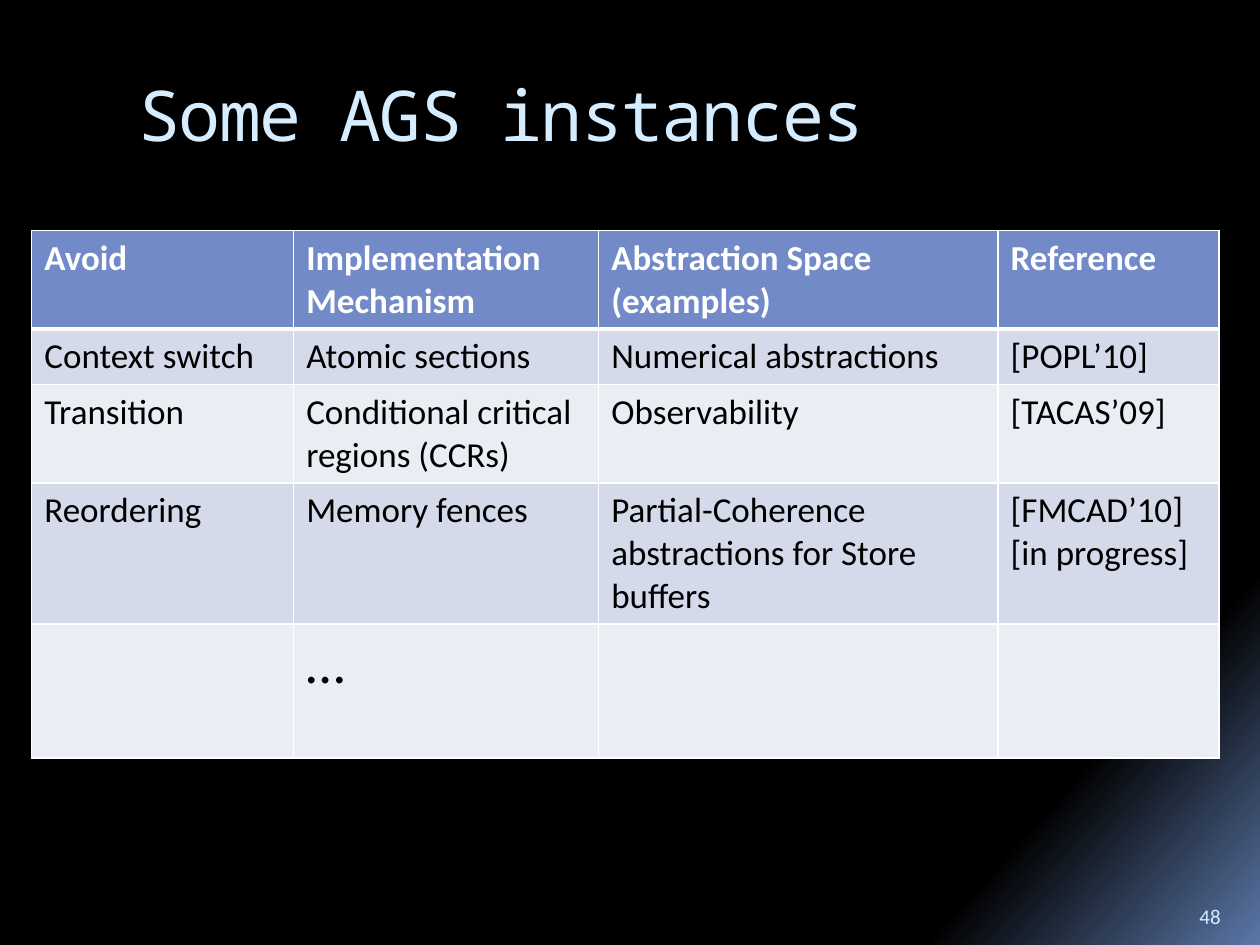
import dataclasses

import lxml.etree
import pptx
import pptx.dml.color
import pptx.enum.text
import pptx.oxml
import pptx.oxml.ns
import pptx.util

Cm = pptx.util.Cm
Pt = pptx.util.Pt
qn = pptx.oxml.ns.qn


@dataclasses.dataclass(frozen=True)
class Theme:
    body_font: str = "Calibri"
    title_font: str = "Noto Sans Mono"
    title_size: int = 40
    body_size: int = 20
    ellipsis_size: int = 32
    number_size: int = 12
    pale: str = "D6ECFF"
    white: str = "FFFFFF"
    black: str = "000000"
    header: str = "738AC8"
    bands: tuple = ("D5DAEB", "EBEDF5")
    glow: tuple = ((65, "000000"), (84, "000000"), (100, "5B77A8"))
    glow_angle: int = 42


class Page:
    """Hold the theme and the current slide, and add styled elements to it."""

    def __init__(self, deck, theme):
        self.theme = theme
        self.slide = deck.slides.add_slide(deck.slide_layouts[5])

    def background(self):
        fill = self.slide.background.fill
        fill.gradient()
        gradient = fill._fill._gradFill
        stops = gradient.find(qn("a:gsLst"))
        for stop in list(stops):
            stops.remove(stop)
        for position, color in self.theme.glow:
            stop = lxml.etree.SubElement(stops, qn("a:gs"), pos=str(position * 1000))
            lxml.etree.SubElement(stop, qn("a:srgbClr"), val=color)
        direction = gradient.find(qn("a:lin"))
        direction.set("ang", str(self.theme.glow_angle * 60000))
        direction.set("scaled", "0")

    def span(self, para, text, size, color, font=None, bold=False):
        span = para.add_run()
        span.text = text
        span.font.name = font or self.theme.body_font
        span.font.size = Pt(size)
        span.font.bold = bold
        span.font.color.rgb = pptx.dml.color.RGBColor.from_string(color)
        return span

    def title(self, text, left, top, width, height):
        box = self.slide.shapes.title
        box.left, box.top, box.width, box.height = map(Cm, (left, top, width, height))
        frame = box.text_frame
        frame.auto_size = pptx.enum.text.MSO_AUTO_SIZE.NONE
        frame.vertical_anchor = pptx.enum.text.MSO_ANCHOR.TOP
        frame.margin_top = Cm(0.03)
        para = frame.paragraphs[0]
        para.alignment = pptx.enum.text.PP_ALIGN.LEFT
        theme = self.theme
        span = self.span(para, text, theme.title_size, theme.pale, theme.title_font)
        span.font._element.set("spc", "-100")

    def number(self, text, left, top, width, height):
        box = self.slide.shapes.add_textbox(*map(Cm, (left, top, width, height)))
        frame = box.text_frame
        frame.word_wrap = True
        frame.vertical_anchor = pptx.enum.text.MSO_ANCHOR.BOTTOM
        self.span(frame.paragraphs[0], text, self.theme.number_size, self.theme.pale)

    def borders(self, cell, bottom):
        properties = cell._tc.get_or_add_tcPr()
        widths = {"a:lnL": 1, "a:lnR": 1, "a:lnT": 1, "a:lnB": bottom}
        for index, (tag, width) in enumerate(widths.items()):
            line = pptx.oxml.parse_xml(
                f'<{tag} {pptx.oxml.ns.nsdecls("a")} w="{Pt(width)}"><a:solidFill>'
                f'<a:srgbClr val="{self.theme.white}"/></a:solidFill></{tag}>'
            )
            properties.insert(index, line)

    def cell(self, cell, paragraphs, row):
        theme = self.theme
        header = row == 0
        cell.fill.solid()
        color = theme.header if header else theme.bands[(row - 1) % 2]
        cell.fill.fore_color.rgb = pptx.dml.color.RGBColor.from_string(color)
        self.borders(cell, 3 if header else 1)
        frame = cell.text_frame
        for index, lines in enumerate(paragraphs):
            para = frame.add_paragraph() if index else frame.paragraphs[0]
            for order, text in enumerate(lines.split("\n")):
                if order:
                    para.add_line_break()
                size = theme.ellipsis_size if text == "…" else theme.body_size
                ink = theme.white if header else theme.black
                self.span(para, text, size, ink, bold=header)

    def table(self, rows, left, top, widths, heights):
        table = self.slide.shapes.add_table(
            len(rows), len(widths), Cm(left), Cm(top), Cm(sum(widths)), Cm(sum(heights))
        ).table
        for column, width in zip(table.columns, widths):
            column.width = Cm(width)
        for index, (row, height) in enumerate(zip(rows, heights)):
            table.rows[index].height = Cm(height)
            for column, paragraphs in enumerate(row):
                self.cell(table.cell(index, column), paragraphs, index)


ROWS = [
    [["Avoid"], ["Implementation Mechanism"], ["Abstraction Space\n(examples)"], ["Reference"]],
    [["Context switch"], ["Atomic sections"], ["Numerical abstractions"], ["[POPL’10]"]],
    [["Transition"], ["Conditional critical regions (CCRs)"], ["Observability"], ["[TACAS’09]"]],
    [
        ["Reordering"],
        ["Memory fences"],
        ["Partial-Coherence abstractions for Store buffers"],
        ["[FMCAD’10]", "[in progress]"],
    ],
    [[], ["…"], [], []],
]


def main():
    deck = pptx.Presentation()
    deck.slide_width, deck.slide_height = Cm(25.4), Cm(19.05)
    page = Page(deck, Theme())
    page.background()
    page.title("Some AGS instances", 2.54, 1.42, 21.59, 2.54)
    page.table(ROWS, 0.64, 4.65, (5.28, 6.15, 8.05, 4.45), (1.88, 1.04, 1.88, 2.7, 2.7))
    page.number("48", 23.93, 17.83, 1.27, 1.02)
    deck.save("out.pptx")


if __name__ == "__main__":
    main()
